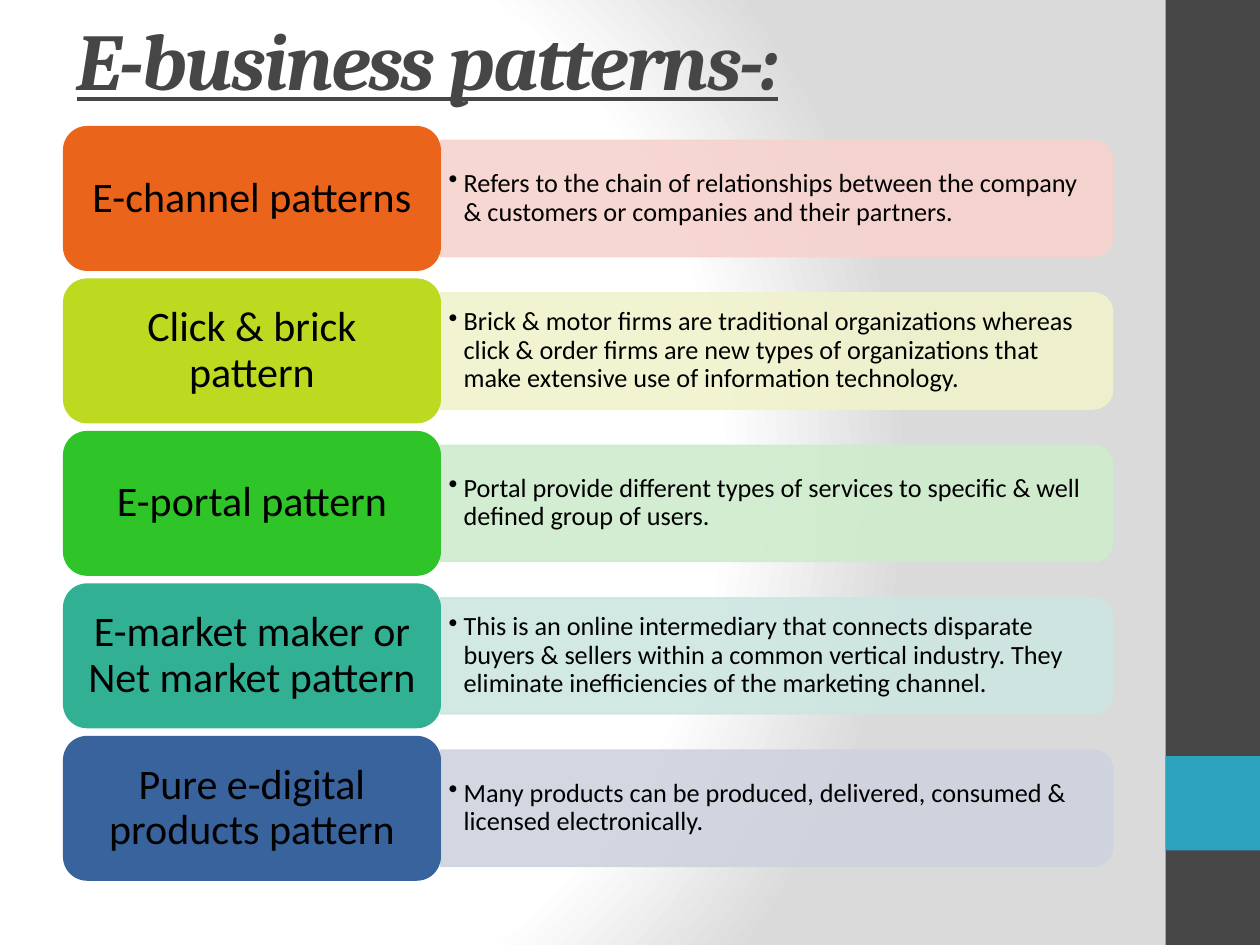
from dataclasses import dataclass

from lxml.etree import SubElement
from pptx import Presentation
from pptx.dml.color import RGBColor
from pptx.enum.shapes import MSO_SHAPE
from pptx.enum.text import MSO_ANCHOR, PP_ALIGN
from pptx.oxml import parse_xml
from pptx.oxml.ns import nsdecls, qn
from pptx.slide import Slide
from pptx.util import Inches, Pt

BLACK = RGBColor(0x00, 0x00, 0x00)
CHARCOAL = RGBColor(0x46, 0x46, 0x46)
TEAL_BLUE = RGBColor(0x2D, 0xA2, 0xBF)
ORANGE = RGBColor(0xEB, 0x64, 0x1B)
PALE_ORANGE = RGBColor(0xF7, 0xD3, 0xCD)
LIME = RGBColor(0xBD, 0xDA, 0x20)
PALE_LIME = RGBColor(0xF1, 0xF2, 0xCC)
GREEN = RGBColor(0x2F, 0xC5, 0x29)
PALE_GREEN = RGBColor(0xCE, 0xEC, 0xCC)
SEA = RGBColor(0x32, 0xB0, 0x94)
PALE_SEA = RGBColor(0xCD, 0xE6, 0xE1)
BLUE = RGBColor(0x39, 0x63, 0x9D)
PALE_BLUE = RGBColor(0xCE, 0xD3, 0xDF)

BACKGROUND_STOPS = [(0, "FFFFFF"), (75, "FFFFFF"), (100, "DADADA")]
FIRST_ROW, ROW_STEP = 4, 4.84
LABEL_HEIGHT, DETAIL_HEIGHT, DETAIL_TEXT_HEIGHT = 4.6, 3.68, 3.32

PATTERNS = [
    ("E-channel patterns", ORANGE, PALE_ORANGE,
     "Refers to the chain of relationships between the company & customers "
     "or companies and their partners."),
    ("Click & brick pattern", LIME, PALE_LIME,
     "Brick & motor firms are traditional organizations whereas click & order firms "
     "are new types of organizations that make extensive use of information technology."),
    ("E-portal pattern", GREEN, PALE_GREEN,
     "Portal provide different types of services to specific & well defined group of users."),
    ("E-market maker or Net market pattern", SEA, PALE_SEA,
     "This is an online intermediary that connects disparate buyers & sellers within a "
     "common vertical industry. They eliminate inefficiencies of the marketing channel."),
    ("Pure e-digital products pattern", BLUE, PALE_BLUE,
     "Many products can be produced, delivered, consumed & licensed electronically."),
]


@dataclass
class PatternSlide:
    """Draw styled elements on a slide, measured on a 40 by 30 grid."""
    slide: Slide
    unit: float = 0.25
    body_font: str = "Calibri"
    title_font: str = "Cambria"

    def place(self, *cells):
        return [Inches(cell * self.unit) for cell in cells]

    def background(self, stops):
        self.slide.background.fill.gradient()
        gradient = self.slide.element.find(".//" + qn("a:gradFill"))
        stop_xml = "".join(
            f'<a:gs pos="{share * 1000}"><a:srgbClr val="{color}"/></a:gs>'
            for share, color in stops)
        gradient.getparent().replace(gradient, parse_xml(
            f'<a:gradFill {nsdecls("a")} rotWithShape="1"><a:gsLst>{stop_xml}</a:gsLst>'
            '<a:path path="circle"><a:fillToRect l="20000" t="50000" r="100000" b="50000"/>'
            '</a:path></a:gradFill>'))

    def block(self, kind, color, *cells):
        shape = self.slide.shapes.add_shape(kind, *self.place(*cells))
        shape.shadow.inherit = False
        shape.fill.solid()
        shape.fill.fore_color.rgb = color
        shape.line.fill.background()
        return shape

    def add_text(self, shape, text, size, font, color=BLACK):
        frame = shape.text_frame
        frame.word_wrap = True
        frame.vertical_anchor = MSO_ANCHOR.MIDDLE
        paragraph = frame.paragraphs[0]
        run = paragraph.add_run()
        run.text = text
        run.font.name = font
        run.font.size = Pt(size)
        run.font.color.rgb = color
        return paragraph, run

    def title(self, text, *cells):
        shape = self.slide.shapes.add_textbox(*self.place(*cells))
        _, run = self.add_text(shape, text, 46, self.title_font, CHARCOAL)
        run.font.bold = run.font.italic = run.font.underline = True
        run._r.get_or_add_rPr().set("spc", "-100")

    def label(self, text, color, *cells):
        shape = self.block(MSO_SHAPE.ROUNDED_RECTANGLE, color, *cells)
        paragraph, _ = self.add_text(shape, text, 24, self.body_font)
        paragraph.alignment = PP_ALIGN.CENTER
        paragraph.line_spacing = 0.9

    def panel(self, color, left, top, width, height):
        shift = (width - height) / 2
        shape = self.block(MSO_SHAPE.ROUND_2_SAME_RECTANGLE, color,
                           left + shift, top - shift, height, width)
        shape.rotation = 90
        shape.line.color.rgb = color
        shape.line.width = Pt(1)
        for swatch in shape.element.spPr.findall(".//" + qn("a:srgbClr")):
            SubElement(swatch, qn("a:alpha"), val="90000")

    def bullet(self, text, *cells):
        shape = self.slide.shapes.add_textbox(*self.place(*cells))
        frame = shape.text_frame
        frame.margin_left = frame.margin_right = Inches(0.06)
        frame.margin_top = frame.margin_bottom = Inches(0.03)
        paragraph, _ = self.add_text(shape, text, 15, self.body_font)
        paragraph.line_spacing = 0.9
        properties = paragraph._p.get_or_add_pPr()
        properties.set("marL", str(Inches(0.12)))
        properties.set("indent", str(-Inches(0.12)))
        SubElement(properties, qn("a:buChar"), char="•")

    def pattern(self, index, name, color, pale, detail):
        top = FIRST_ROW + index * ROW_STEP
        middle = top + LABEL_HEIGHT / 2
        self.panel(pale, 14, middle - DETAIL_HEIGHT / 2, 21.32, DETAIL_HEIGHT)
        self.bullet(detail, 14, middle - DETAIL_TEXT_HEIGHT / 2, 21.16, DETAIL_TEXT_HEIGHT)
        self.label(name, color, 2, top, 12, LABEL_HEIGHT)


def main():
    presentation = Presentation()
    presentation.slide_width = Inches(10)
    presentation.slide_height = Inches(7.5)
    page = PatternSlide(presentation.slides.add_slide(presentation.slide_layouts[6]))
    page.background(BACKGROUND_STOPS)
    page.block(MSO_SHAPE.RECTANGLE, CHARCOAL, 37, 0, 3, 30)
    page.block(MSO_SHAPE.RECTANGLE, TEAL_BLUE, 37, 24, 3, 3)
    page.title("E-business patterns-:", 2.04, 0, 33.32, 3.72)
    for index, entry in enumerate(PATTERNS):
        page.pattern(index, *entry)
    presentation.save("out.pptx")


if __name__ == "__main__":
    main()
